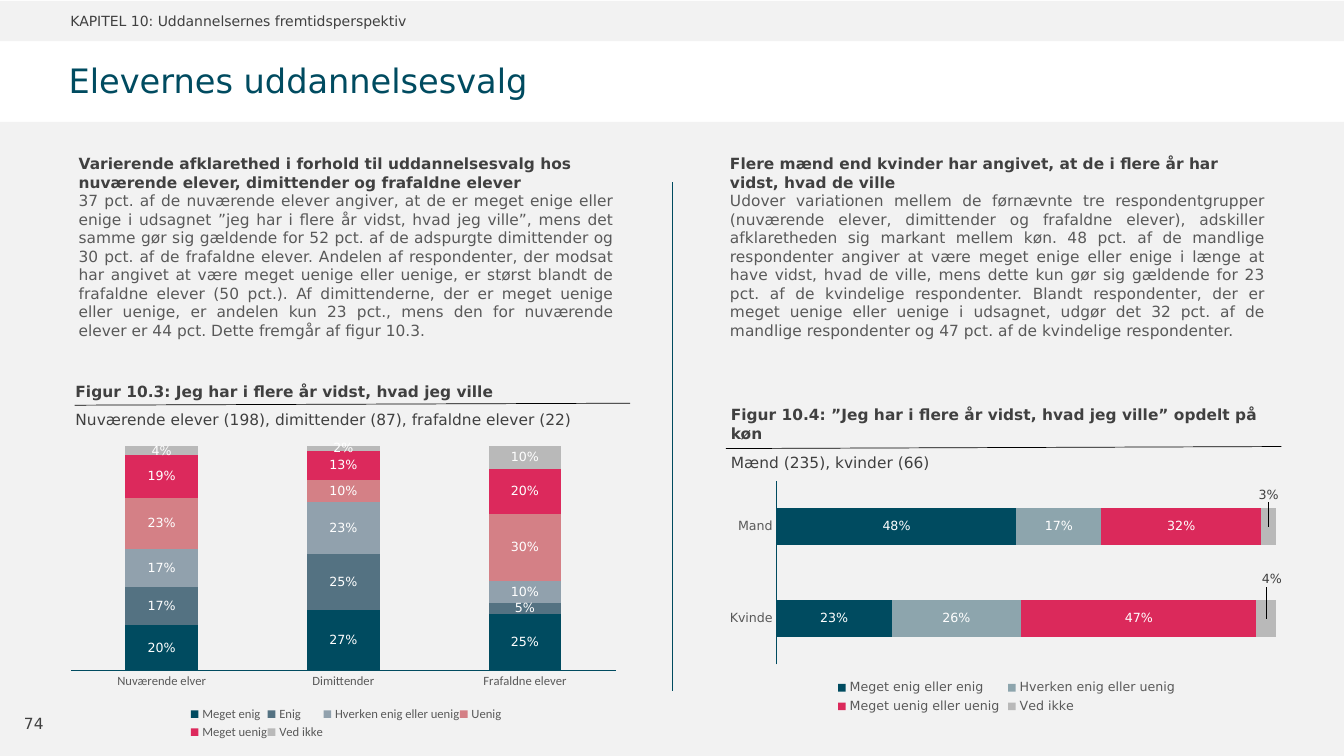
import dataclasses

import lxml.etree
import pptx
import pptx.chart.data
import pptx.dml.color
import pptx.enum.chart
import pptx.enum.shapes
import pptx.enum.text
import pptx.oxml.ns
import pptx.util

PX = 9144
ALIGN = pptx.enum.text.PP_ALIGN
ANCHOR = pptx.enum.text.MSO_ANCHOR
CHART = pptx.enum.chart.XL_CHART_TYPE
qn = pptx.oxml.ns.qn


@dataclasses.dataclass(frozen=True)
class Theme:
    """Colours, fonts and type sizes of the slide."""
    petrol: str = "004B60"
    dark: str = "404040"
    grey: str = "595959"
    band: str = "F2F2F2"
    black: str = "000000"
    white: str = "FFFFFF"
    font: str = "DejaVu Sans"
    chart_font: str = "Calibri"
    title: int = 24
    body: int = 11
    small: int = 10
    label: int = 9


THEME = Theme()


def px(*lengths):
    """Turn px lengths into EMU."""
    return [pptx.util.Emu(length * PX) for length in lengths]


def rgb(code):
    """Turn a hex code into a colour."""
    return pptx.dml.color.RGBColor.from_string(code)


def apply(target, **values):
    """Set each given attribute on the target."""
    for name, value in values.items():
        setattr(target, name, value)


def set_font(font, size, color, name=THEME.font, bold=False):
    """Format a font."""
    apply(font, name=name, size=pptx.util.Pt(size), bold=bold)
    font.color.rgb = rgb(color)


def place(shape, box):
    """Move a shape to a px box."""
    apply(shape, **dict(zip(("left", "top", "width", "height"), px(*box))))


def add_text(page, box, text, size=THEME.body, bold=False, **frame_format):
    """Add a one-paragraph text box."""
    frame = page.shapes.add_textbox(*px(*box)).text_frame
    apply(frame, word_wrap=True, **frame_format)
    para = frame.paragraphs[0]
    para.text = text
    set_font(para.font, size, THEME.dark, bold=bold)
    return para


def add_rule(page, start, end, color):
    """Draw a thin straight line."""
    rule = page.shapes.add_connector(
        pptx.enum.shapes.MSO_CONNECTOR.STRAIGHT, *px(*start, *end))
    rule.line.color.rgb = rgb(color)
    rule.line.width = pptx.util.Pt(0.5)
    lxml.etree.SubElement(rule.element.spPr, qn("a:effectLst"))


def add_bands(page, boxes):
    """Place the grey bands behind everything else."""
    for box in boxes:
        band = page.shapes.add_shape(
            pptx.enum.shapes.MSO_SHAPE.RECTANGLE, *px(*box))
        band.shadow.inherit = False
        band.fill.solid()
        band.fill.fore_color.rgb = rgb(THEME.band)
        band.line.fill.background()
        band.element.getparent().insert(2, band.element)


def fill_title(title, box, text):
    """Move and format the title placeholder."""
    place(title, box)
    frame = title.text_frame
    apply(frame, margin_left=0, margin_top=0, margin_right=0, margin_bottom=0,
          word_wrap=False, vertical_anchor=ANCHOR.MIDDLE,
          auto_size=pptx.enum.text.MSO_AUTO_SIZE.NONE)
    para = frame.paragraphs[0]
    para.text = text
    apply(para, alignment=ALIGN.LEFT, line_spacing=0.9)
    set_font(para.font, THEME.title, THEME.petrol)


def fill_body(body, box, heading, text):
    """Fill a body placeholder with a bold heading and justified text."""
    place(body, box)
    frame = body.text_frame
    apply(frame, word_wrap=True, vertical_anchor=ANCHOR.TOP,
          auto_size=pptx.enum.text.MSO_AUTO_SIZE.NONE)
    frame.text = f"{heading}\n{text}"
    formats = ((ALIGN.LEFT, THEME.dark, True), (ALIGN.JUSTIFY, THEME.grey, False))
    for para, (alignment, color, bold) in zip(frame.paragraphs, formats):
        properties = para._p.get_or_add_pPr()
        properties.set("marL", "0")
        properties.set("indent", "0")
        lxml.etree.SubElement(properties, qn("a:buNone"))
        apply(para, alignment=alignment, space_before=pptx.util.Pt(0))
        set_font(para.font, THEME.body, color, bold=bold)


def add_caption(page, box, title, subtitle, indent):
    """Add a figure title, a rule at the foot of the box and a subtitle."""
    left, top, width, height = box
    foot = top + height
    add_text(page, (left, top, width, 52), title, bold=True)
    add_rule(page, (left + indent, foot), (left + indent + width, foot - 2),
             THEME.black)
    add_text(page, (left, foot, width, 26), subtitle)


def set_layout(parent, index, **values):
    """Give a chart part a manual layout."""
    for old in parent.findall(qn("c:layout")):
        parent.remove(old)
    layout = lxml.etree.Element(qn("c:layout"))
    manual = lxml.etree.SubElement(layout, qn("c:manualLayout"))
    for name, value in values.items():
        lxml.etree.SubElement(manual, qn(f"c:{name}")).set("val", str(value))
    parent.insert(index, layout)


def add_stacked_chart(page, box, kind, font, categories, series, plot_box, legend_box):
    """Add a chart stacked to 100 percent with labels and a legend."""
    chart_data = pptx.chart.data.CategoryChartData(number_format="0%")
    chart_data.categories = categories
    for name, _, values in series:
        chart_data.add_series(name, values)
    chart = page.shapes.add_chart(kind, *px(*box), chart_data).chart
    apply(chart, has_title=False, has_legend=True)
    set_font(chart.font, THEME.small, THEME.black, font)

    plot = chart.plots[0]
    apply(plot, gap_width=150, overlap=100, vary_by_categories=False)
    for bars, (_, color, _) in zip(plot.series, series):
        bars.format.fill.solid()
        bars.format.fill.fore_color.rgb = rgb(color)
        apply(bars.data_labels, show_value=True, number_format="0%",
              number_format_is_linked=False,
              position=pptx.enum.chart.XL_LABEL_POSITION.CENTER)
        set_font(bars.data_labels.font, THEME.label, THEME.white)

    axis = chart.category_axis
    tick = pptx.enum.chart.XL_TICK_MARK.NONE
    apply(axis, major_tick_mark=tick, minor_tick_mark=tick, has_major_gridlines=False)
    axis.format.line.color.rgb = rgb(THEME.petrol)
    axis.format.line.width = pptx.util.Pt(0.75)
    set_font(axis.tick_labels.font, THEME.label, THEME.grey, font)
    apply(chart.value_axis, visible=False, has_major_gridlines=False,
          minimum_scale=0, maximum_scale=1)

    apply(chart.legend, include_in_layout=False,
          position=pptx.enum.chart.XL_LEGEND_POSITION.BOTTOM)
    set_font(chart.legend.font, THEME.label, THEME.grey, font)
    edges = {"xMode": "edge", "yMode": "edge"}
    set_layout(next(chart.element.iter(qn("c:plotArea"))), 0,
               layoutTarget="inner", **edges, **dict(zip("xywh", plot_box)))
    set_layout(next(chart.element.iter(qn("c:legend"))), 1,
               **edges, **dict(zip("xywh", legend_box)))
    return chart


def lift_last_labels(chart, offsets):
    """Raise the labels of the last series above their bars."""
    bars = chart.plots[0].series[-1]
    set_font(bars.data_labels.font, THEME.label, THEME.dark)
    for index in range(len(offsets)):
        label = bars.points[index].data_label
        label.position = pptx.enum.chart.XL_LABEL_POSITION.CENTER
        set_font(label.font, THEME.label, THEME.dark)
    for label, (x, y) in zip(chart.element.iter(qn("c:dLbl")), offsets):
        set_layout(label, 1, x=x, y=y)


def build_page(deck):
    """Build the slide with two columns of text and charts."""
    page = deck.slides.add_slide(deck.slide_layouts[3])
    title, left_body, right_body = page.placeholders
    add_bands(page, ((0, 1, 1333, 40), (0, 121, 1333, 629)))
    add_text(page, (60, 0, 570, 41), "KAPITEL 10: Uddannelsernes fremtidsperspektiv",
             THEME.small, vertical_anchor=ANCHOR.MIDDLE)
    fill_title(title, (68, 42, 1189, 79), "Elevernes uddannelsesvalg")
    number = add_text(page, (9, 698, 49, 40), "74", vertical_anchor=ANCHOR.MIDDLE)
    number.alignment = ALIGN.CENTER
    add_rule(page, (667, 181), (667, 686), THEME.petrol)

    fill_body(
        left_body, (68, 148, 551, 521),
        "Varierende afklarethed i forhold til uddannelsesvalg hos nuværende elever, dimittender og frafaldne elever",
        "37 pct. af de nuværende elever angiver, at de er meget enige eller enige i udsagnet ”jeg har i flere år vidst, hvad jeg ville”, mens det samme gør sig gældende for 52 pct. af de adspurgte dimittender og 30 pct. af de frafaldne elever. Andelen af respondenter, der modsat har angivet at være meget uenige eller uenige, er størst blandt de frafaldne elever (50 pct.). Af dimittenderne, der er meget uenige eller uenige, er andelen kun 23 pct., mens den for nuværende elever er 44 pct. Dette fremgår af figur 10.3.")
    add_caption(page, (65, 374, 551, 28),
                "Figur 10.3: Jeg har i flere år vidst, hvad jeg ville",
                "Nuværende elever (198), dimittender (87), frafaldne elever (22)", 9)
    add_stacked_chart(
        page, (59, 437, 563, 300), CHART.COLUMN_STACKED_100, THEME.chart_font,
        ("Nuværende elver", "Dimittender", "Frafaldne elever"),
        (("Meget enig", "004B60", (0.2, 0.27, 0.25)),
         ("Enig", "547282", (0.17, 0.25, 0.05)),
         ("Hverken enig eller uenig", "91A1AD", (0.17, 0.23, 0.1)),
         ("Uenig", "D48086", (0.23, 0.1, 0.3)),
         ("Meget uenig", "DC295C", (0.19, 0.13, 0.2)),
         ("Ved ikke", "B9B9B9", (0.04, 0.02, 0.1))),
        (0.02, 0.02, 0.96, 0.74), (0.23, 0.87, 0.55, 0.13))

    fill_body(
        right_body, (714, 148, 551, 521),
        "Flere mænd end kvinder har angivet, at de i flere år har vidst, hvad de ville",
        "Udover variationen mellem de førnævnte tre respondentgrupper (nuværende elever, dimittender og frafaldne elever), adskiller afklaretheden sig markant mellem køn. 48 pct. af de mandlige respondenter angiver at være meget enige eller enige i længe at have vidst, hvad de ville, mens dette kun gør sig gældende for 23 pct. af de kvindelige respondenter. Blandt respondenter, der er meget uenige eller uenige i udsagnet, udgør det 32 pct. af de mandlige respondenter og 47 pct. af de kvindelige respondenter.")
    add_caption(page, (715, 397, 551, 48),
                "Figur 10.4: ”Jeg har i flere år vidst, hvad jeg ville” opdelt på køn",
                "Mænd (235), kvinder (66)", 5)
    gender_chart = add_stacked_chart(
        page, (714, 472, 563, 240), CHART.BAR_STACKED_100, THEME.font,
        ("Kvinde", "Mand"),
        (("Meget enig eller enig", "004B60", (0.23, 0.48)),
         ("Hverken enig eller uenig", "8DA5AD", (0.26, 0.17)),
         ("Meget uenig eller uenig", "DB295B", (0.47, 0.32)),
         ("Ved ikke", "B9B9B9", (0.04, 0.03))),
        (0.1, 0.02, 0.88, 0.76), (0.2, 0.83, 0.61, 0.17))
    lift_last_labels(gender_chart, ((0.01, -0.16), (0, -0.13)))


def main():
    """Create and save the deck."""
    deck = pptx.Presentation()
    apply(deck, **dict(zip(("slide_width", "slide_height"), px(1333, 750))))
    build_page(deck)
    deck.save("out.pptx")


if __name__ == "__main__":
    main()
